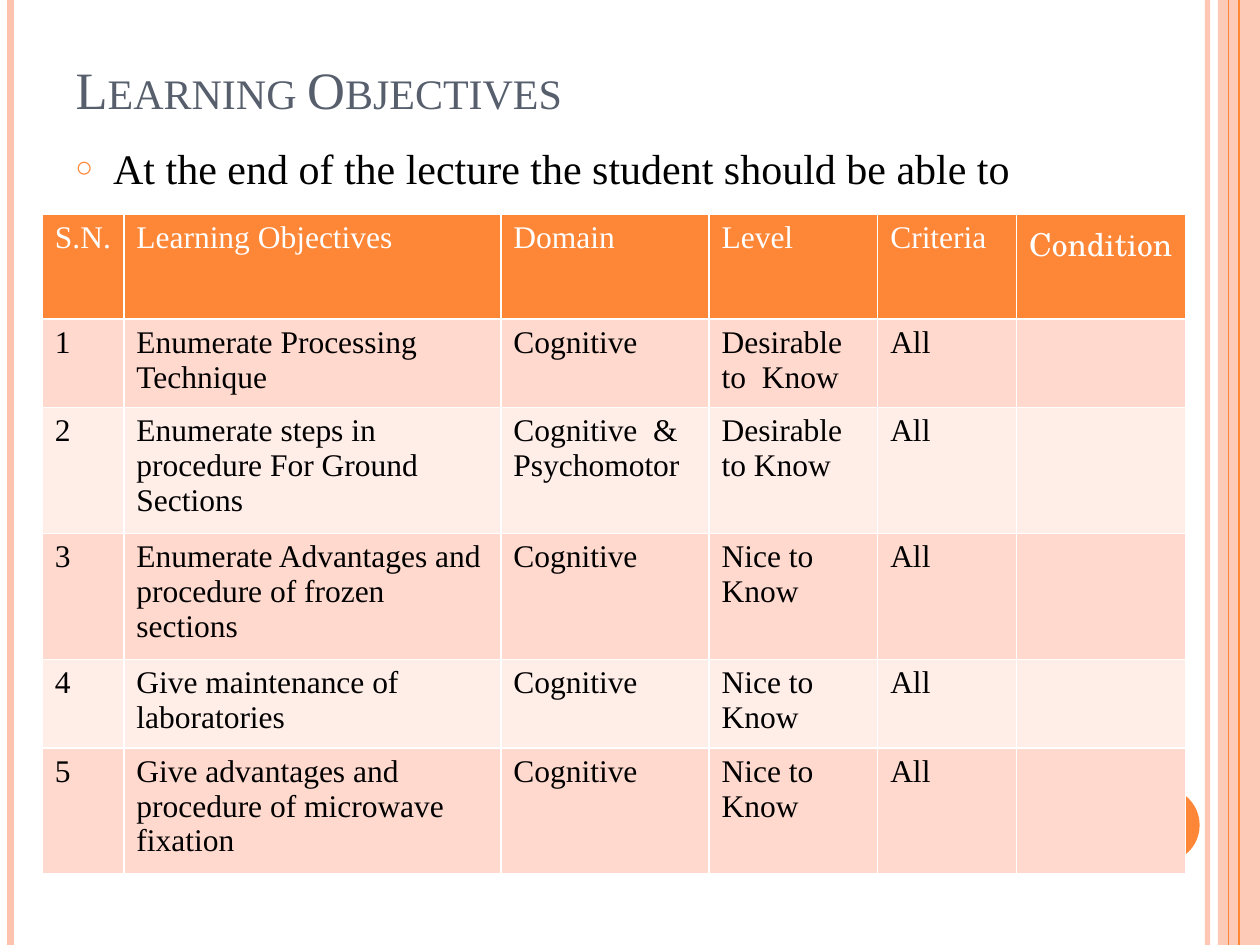
import pptx
import pptx.util
import pptx.dml.color
import pptx.enum.shapes
import pptx.enum.text
import pptx.oxml
import pptx.oxml.ns

Pt = pptx.util.Pt
qn = pptx.oxml.ns.qn
SHAPE = pptx.enum.shapes.MSO_SHAPE
ANCHOR = pptx.enum.text.MSO_ANCHOR
ALIGN = pptx.enum.text.PP_ALIGN
ORANGE, PEACH, WHITE, BLACK = "FE8637", "FEC3AE", "FFFFFF", "000000"
SERIF = "Times New Roman"


def paint(fill, hue, alpha=100):
    """Make a fill solid; alpha is its opacity in percent."""
    fill.solid()
    fill.fore_color.rgb = pptx.dml.color.RGBColor.from_string(hue)
    if alpha < 100:
        tag = fill._xPr.find(qn("a:solidFill"))[0]
        pptx.oxml.ns  # namespace map used by qn
        tag.append(tag.makeelement(qn("a:alpha"), {"val": str(alpha * 1000)}))


def write(frame, text, size=18, hue=BLACK, face=SERIF):
    para = frame.paragraphs[0]
    para.alignment = ALIGN.LEFT
    run = para.add_run()
    run.text = text
    run.font.size = Pt(size)
    run.font.name = face
    run.font.bold = False
    paint(run.font.fill, hue)
    return para


deck = pptx.Presentation()
deck.slide_width, deck.slide_height = Pt(720), Pt(540)
slide = deck.slides.add_slide(deck.slide_layouts[5])
shapes = slide.shapes

# Side stripes: a band with lines on the right, one line on the left
band = shapes.add_shape(SHAPE.RECTANGLE, Pt(696), 0, Pt(24), Pt(540))
paint(band.fill, PEACH, 87)
dot = shapes.add_shape(SHAPE.OVAL, Pt(642.5), Pt(450), Pt(43), Pt(43))
paint(dot.fill, ORANGE)
for item in (band, dot):
    item.line.fill.background()
    item.shadow.inherit = False

for x, hue, width, alpha in [
    (690, PEACH, 3, 93),
    (6, PEACH, 4.5, 100),
    (708, ORANGE, 1.5, 100),
    (702, ORANGE, 0.75, 100),
]:
    line = shapes.add_connector(
        pptx.enum.shapes.MSO_CONNECTOR.STRAIGHT, Pt(x), 0, Pt(x), Pt(540))
    line.line.width = Pt(width)
    paint(line.line.fill, hue, alpha)
    props = line._element.spPr
    props.append(props.makeelement(qn("a:effectLst"), {}))

# Title in small capitals
title = shapes.title
title.left, title.top, title.width, title.height = Pt(36), Pt(-18), Pt(648), Pt(90)
title.text_frame.vertical_anchor = ANCHOR.BOTTOM
para = write(title.text_frame, "Learning Objectives", size=30, hue="575F6D")
para.runs[0].font._element.set("cap", "small")

# Bulleted lead-in
lead = shapes.add_textbox(Pt(36), Pt(78), Pt(648), Pt(356))
lead.text_frame.word_wrap = True
para = write(lead.text_frame,
             "At the end of the lecture the student should be able to", size=24)
para.space_before = Pt(6)
props = para._p.get_or_add_pPr()
props.set("marL", str(Pt(21.6)))
props.set("indent", str(Pt(-21.6)))
hue = props.makeelement(qn("a:buClr"), {})
hue.append(hue.makeelement(qn("a:srgbClr"), {"val": ORANGE}))
props.append(hue)
for tag, value in [
    ("a:buSzPct", {"val": "70000"}),
    ("a:buFont", {"typeface": SERIF}),
    ("a:buChar", {"char": "○"}),
]:
    props.append(props.makeelement(qn(tag), value))

# Table of objectives
head = ["S.N.", "Learning Objectives", "Domain", "Level", "Criteria", "Condition"]
goals = [
    ("Enumerate Processing Technique", "Cognitive", "Desirable to  Know"),
    ("Enumerate steps in procedure For Ground Sections",
     "Cognitive  & Psychomotor", "Desirable to Know"),
    ("Enumerate Advantages and procedure of frozen sections",
     "Cognitive", "Nice to Know"),
    ("Give maintenance of laboratories", "Cognitive", "Nice to Know"),
    ("Give advantages and procedure of microwave fixation",
     "Cognitive", "Nice to Know"),
]
rows = [head] + [[str(n), *goal, "All", ""] for n, goal in enumerate(goals, 1)]
table = shapes.add_table(
    len(rows), len(head), Pt(24.2), Pt(122.4), Pt(653), Pt(270)).table
for col, width in zip(table.columns, [46.6, 215.4, 119, 96.4, 79.4, 96.4]):
    col.width = Pt(width)
for r, row in enumerate(rows):
    table.rows[r].height = Pt(42 if r else 60)
    for c, text in enumerate(row):
        cell = table.cell(r, c)
        if r == 0:
            paint(cell.fill, ORANGE)
        else:
            paint(cell.fill, "FFD9CE" if r % 2 else "FFEDE8")
        if text:
            write(cell.text_frame, text, hue=BLACK if r else WHITE,
                  face="TeX Gyre Schola" if text == "Condition" else SERIF)

deck.save("out.pptx")
